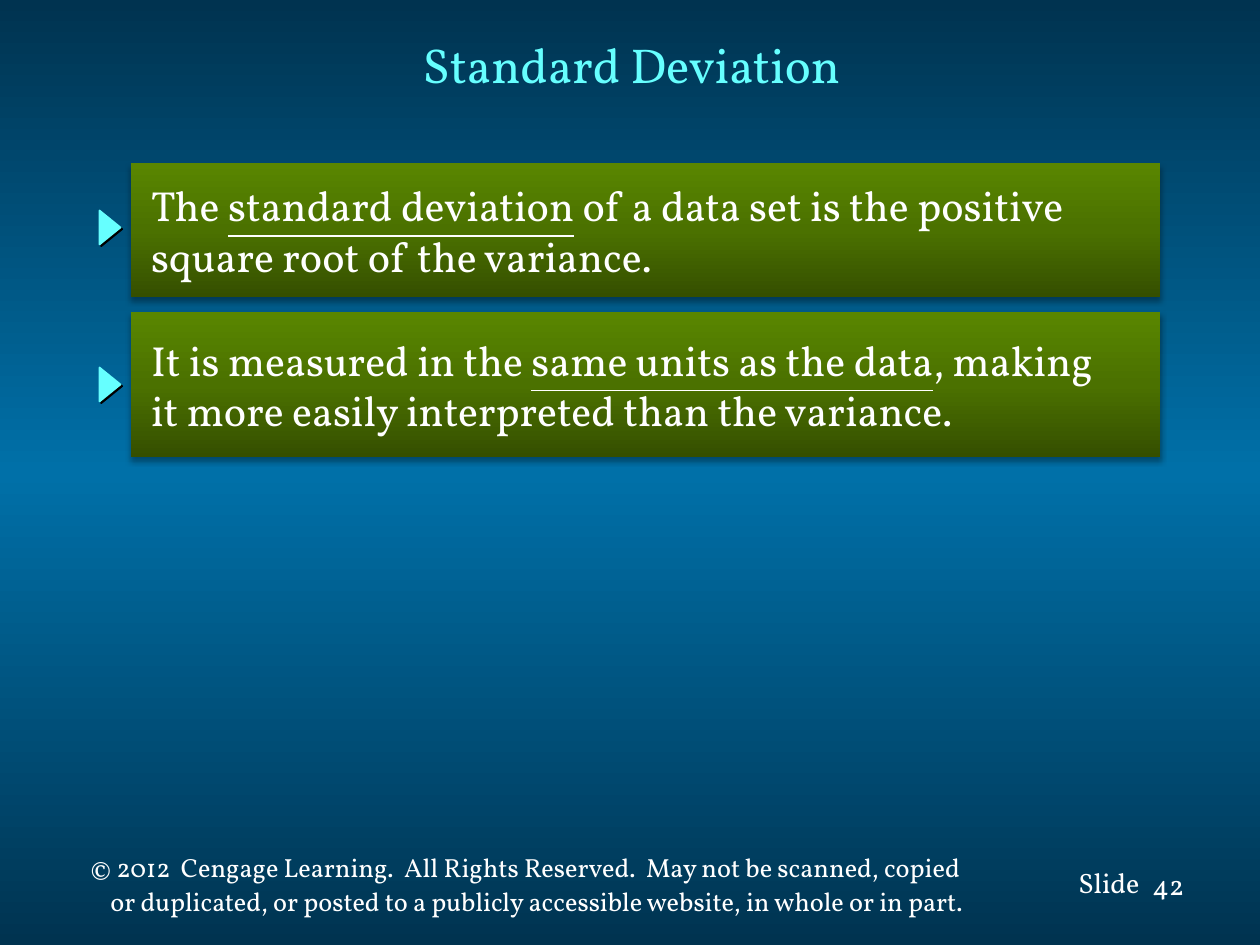
"""Build the Standard Deviation slide."""
from lxml.etree import SubElement
from pptx import Presentation
from pptx.dml.color import RGBColor
from pptx.enum.shapes import MSO_SHAPE as Shape
from pptx.enum.text import MSO_ANCHOR as Anchor, PP_ALIGN as Align
from pptx.oxml.ns import qn
from pptx.util import Pt

PX = 7257
FONT = "Vollkorn"
WHITE, CYAN = "FFFFFF", "66FFFF"
color = RGBColor.from_string


def paint_down(fill, element, colors):
    fill.gradient()
    fill.gradient_angle = 270
    stops = next(element.iter(qn("a:gsLst")))
    for stop in list(stops):
        stops.remove(stop)
    for index, value in enumerate(colors):
        stop = SubElement(stops, qn("a:gs"), pos=str(index * 50000))
        SubElement(stop, qn("a:srgbClr"), val=value)


def add_shadow(effects, opacity, blur, distance, angle):
    shadow = SubElement(effects, qn("a:outerShdw"), blurRad=str(Pt(blur)), dist=str(Pt(distance)),
                        dir=str(angle * 60000), algn="ctr", rotWithShape="0")
    black = SubElement(shadow, qn("a:srgbClr"), val="000000")
    SubElement(black, qn("a:alpha"), val=str(opacity * 1000))


deck = Presentation()
deck.slide_width, deck.slide_height = 1260 * PX, 945 * PX
page = deck.slides.add_slide(deck.slide_layouts[6])
paint_down(page.background.fill, page._element, ["003350", "0070A8", "003350"])

labels = [
    (96, 18, 1071, 91, "Standard Deviation", 28, CYAN, Align.CENTER, Anchor.MIDDLE, False),
    (1066, 859, 90, 47, "Slide", 16, WHITE, Align.LEFT, Anchor.TOP, True),
    (1140, 861, 76, 47, "42", 16, WHITE, Align.LEFT, Anchor.TOP, True),
]
for left, top, width, height, text, size, ink, align, anchor, shadowed in labels:
    box = page.shapes.add_textbox(left * PX, top * PX, width * PX, height * PX)
    frame = box.text_frame
    frame.word_wrap = True
    frame.vertical_anchor = anchor
    para = frame.paragraphs[0]
    para.alignment = align
    span = para.add_run()
    span.text = text
    para.font.name, para.font.size = FONT, Pt(size)
    para.font.color.rgb = color(ink)
    if shadowed:
        effects = SubElement(span._r.get_or_add_rPr(), qn("a:effectLst"))
        add_shadow(effects, 100, 0, 1.5, 45)

notice = page.shapes.add_textbox(78 * PX, 849 * PX, 941 * PX, 76 * PX).text_frame
notice.word_wrap = True
notice_lines = [
    ("© 2012  Cengage Learning.  All Rights Reserved.  May not be scanned, copied", 0, 0),
    ("or duplicated, or posted to a publicly accessible website, in whole or in part.", 20, 3),
]
for index, (text, indent, gap) in enumerate(notice_lines):
    para = notice.add_paragraph() if index else notice.paragraphs[0]
    para.text = text
    para.line_spacing, para.space_before = Pt(16), Pt(gap)
    para._p.get_or_add_pPr().set("marL", str(indent * PX))
    para.font.name, para.font.size = FONT, Pt(15)
    para.font.color.rgb = color(WHITE)

statements = [
    (163, 134, 217, [["The ", "standard deviation", " of a data set is the positive"],
                     ["square root of the variance."]]),
    (312, 145, 374, [["It is measured in the ", "same units as the data", ", making"],
                     ["it more easily interpreted than the variance."]]),
]
for top, height, marker_top, lines in statements:
    panel = page.shapes.add_shape(Shape.RECTANGLE, 131 * PX, top * PX, 1029 * PX, height * PX)
    panel.shadow.inherit = False
    panel.line.fill.background()
    paint_down(panel.fill, panel._element, ["598600", "4B7100", "354F00"])
    add_shadow(panel._element.spPr.find(qn("a:effectLst")), 32, 3.5, 2.2, 90)
    frame = panel.text_frame
    frame.word_wrap = True
    frame.vertical_anchor = Anchor.MIDDLE
    frame.margin_left = 20 * PX
    for index, pieces in enumerate(lines):
        para = frame.add_paragraph() if index else frame.paragraphs[0]
        para.alignment = Align.LEFT
        for order, piece in enumerate(pieces):
            span = para.add_run()
            span.text = piece
            if order == 1:
                span.font.underline = True
        para.font.name, para.font.size = FONT, Pt(24)
        para.font.color.rgb = color(WHITE)

    marker = page.shapes.add_shape(Shape.ISOSCELES_TRIANGLE, 93 * PX, marker_top * PX, 34 * PX, 21 * PX)
    marker.rotation = 90
    marker.shadow.inherit = False
    marker.fill.solid()
    marker.fill.fore_color.rgb = color(CYAN)
    marker.line.color.rgb = color(CYAN)
    marker.line.width = Pt(1)
    add_shadow(marker._element.spPr.find(qn("a:effectLst")), 100, 0, 1.4, 45)

deck.save("out.pptx")
